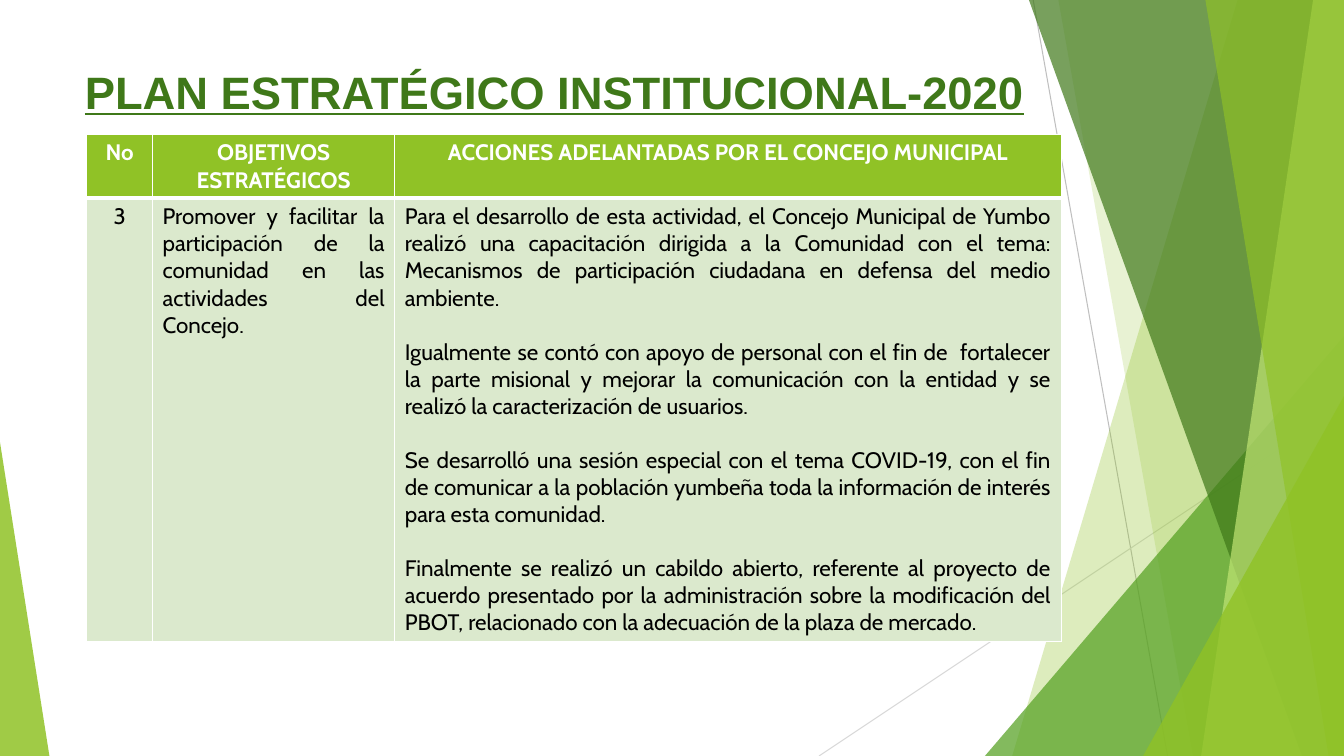
from lxml import etree
from pptx import Presentation
from pptx.dml.color import RGBColor
from pptx.enum.shapes import MSO_CONNECTOR, MSO_SHAPE
from pptx.enum.text import MSO_ANCHOR, PP_ALIGN
from pptx.oxml.ns import qn
from pptx.util import Pt

W, H = 960, 540
COLORS = {
    "lime": "90C226", "green": "54A021", "dark": "3F7819", "pale": "C0E474",
    "row": "DBE9CD", "white": "FFFFFF", "black": "000000",
    "gray": "BFBFBF", "light_gray": "D9D9D9",
}


def rgb(name):
    return RGBColor.from_string(COLORS[name])


def paint(sp, color, opacity):
    sp.shadow.inherit = False
    sp.fill.solid()
    sp.fill.fore_color.rgb = rgb(color)
    sp.line.fill.background()
    clr = sp.fill._xPr.find(qn("a:solidFill"))[0]
    etree.SubElement(clr, qn("a:alpha"), val=str(opacity * 1000))


prs = Presentation()
prs.slide_width, prs.slide_height = Pt(W), Pt(H)
s = prs.slides.add_slide(prs.slide_layouts[6])

# Thin background lines
for x1, y1, x2, y2, color in [(738, 0, 834, H, "gray"),
                              (W, 290, 585, H, "light_gray")]:
    line = s.shapes.add_connector(MSO_CONNECTOR.STRAIGHT,
                                  Pt(x1), Pt(y1), Pt(x2), Pt(y2))
    line.line.color.rgb = rgb(color)
    line.line.width = Pt(0.75)
    etree.SubElement(line._element.spPr, qn("a:effectLst"))

# Translucent facets, back to front
# band: top x, bottom x (reaches the right edge)
# triangle: left, top, width, apex position (stands on the bottom edge)
facets = [
    ("band", (884, 723), "lime", 30),
    ("band", (756, 852), "lime", 20),
    ("triangle", (703.5, 240, 256.5, 1), "green", 72),
    ("band", (735, 930), "dark", 70),
    ("band", (938, 858), "pale", 70),
    ("band", (861, 949), "lime", 65),
    ("triangle", (816.5, 283, 143.5, 1), "lime", 80),
    ("triangle", (0, 316, 35.3, 0), "lime", 85),
]
for kind, dims, color, opacity in facets:
    if kind == "band":
        top_x, bottom_x = dims
        fb = s.shapes.build_freeform(Pt(top_x), 0)
        fb.add_line_segments([(Pt(W), 0), (Pt(W), Pt(H)), (Pt(bottom_x), Pt(H))])
        sp = fb.convert_to_shape()
    else:
        left, top, width, apex = dims
        sp = s.shapes.add_shape(MSO_SHAPE.ISOSCELES_TRIANGLE,
                                Pt(left), Pt(top), Pt(width), Pt(H - top))
        sp.adjustments[0] = apex
    paint(sp, color, opacity)

# Title
tf = s.shapes.add_textbox(Pt(53.5), Pt(39), Pt(713.5), Pt(57)).text_frame
tf.word_wrap = True
tf.vertical_anchor = MSO_ANCHOR.MIDDLE
p = tf.paragraphs[0]
p.line_spacing = 0.9
r = p.add_run()
r.text = "PLAN ESTRATÉGICO INSTITUCIONAL-2020"
r.font.name, r.font.size = "Arial", Pt(32.4)
r.font.bold = r.font.underline = True
r.font.color.rgb = rgb("dark")

# Table
rows = [
    [["No"], ["OBJETIVOS ESTRATÉGICOS"],
     ["ACCIONES ADELANTADAS POR EL CONCEJO MUNICIPAL"]],
    [["3"],
     ["Promover y facilitar la participación de la comunidad en las "
      "actividades del Concejo."],
     ["Para el desarrollo de esta actividad, el Concejo Municipal de Yumbo "
      "realizó una capacitación dirigida a la Comunidad con el tema: "
      "Mecanismos de participación ciudadana en defensa del medio ambiente.",
      "Igualmente se contó con apoyo de personal con el fin de  fortalecer la "
      "parte misional y mejorar la comunicación con la entidad y se realizó la "
      "caracterización de usuarios.",
      "Se desarrolló una sesión especial con el tema COVID-19, con el fin de "
      "comunicar a la población yumbeña toda la información de interés para "
      "esta comunidad.",
      "Finalmente se realizó un cabildo abierto, referente al proyecto de "
      "acuerdo presentado por la administración sobre la modificación del "
      "PBOT, relacionado con la adecuación de la plaza de mercado."]],
]
col_widths = [47, 173, 476]
row_heights = [45, 316.5]
tbl = s.shapes.add_table(2, 3, Pt(62), Pt(96), Pt(sum(col_widths)),
                         Pt(sum(row_heights))).table
for col, width in zip(tbl.columns, col_widths):
    col.width = Pt(width)
for row, height in zip(tbl.rows, row_heights):
    row.height = Pt(height)

for i, row in enumerate(rows):
    header = i == 0
    for j, paragraphs in enumerate(row):
        cell = tbl.cell(i, j)
        cell.fill.solid()
        cell.fill.fore_color.rgb = rgb("lime" if header else "row")

        # White borders, thicker between header and body
        tcPr = cell._tc.get_or_add_tcPr()
        for k, side in enumerate(["lnL", "lnR", "lnT", "lnB"]):
            thick = side == ("lnB" if header else "lnT")
            ln = etree.Element(qn(f"a:{side}"), w=str(Pt(3 if thick else 1)))
            fill = etree.SubElement(ln, qn("a:solidFill"))
            etree.SubElement(fill, qn("a:srgbClr"), val=COLORS["white"])
            tcPr.insert(k, ln)

        tf = cell.text_frame
        for n, text in enumerate(paragraphs):
            p = tf.add_paragraph() if n else tf.paragraphs[0]
            p.alignment = PP_ALIGN.CENTER if header or j == 0 else PP_ALIGN.JUSTIFY
            if n:
                p.space_before = Pt(19.3)
            r = p.add_run()
            r.text = text
            r.font.name, r.font.size = "Cabin", Pt(16)
            r.font.bold = header
            r.font.color.rgb = rgb("white" if header else "black")

prs.save("out.pptx")
